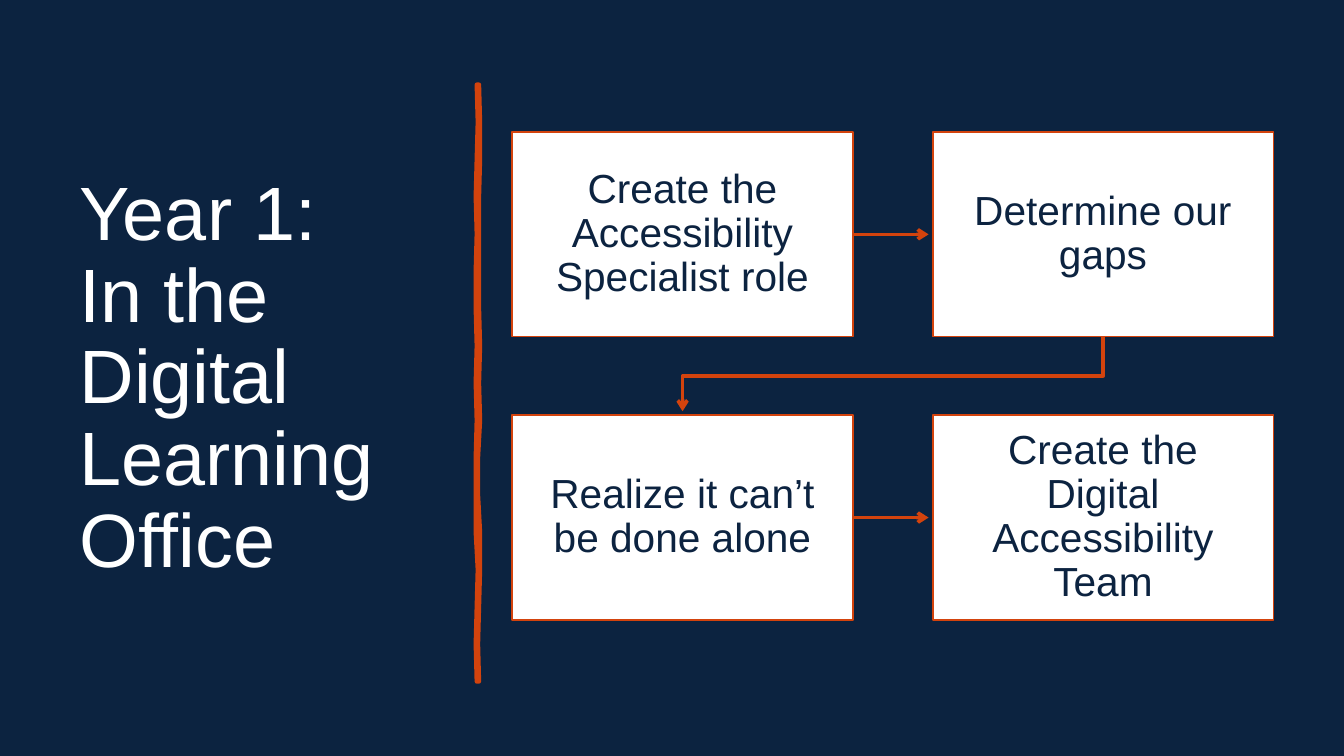
from dataclasses import dataclass

from lxml import etree
from pptx import Presentation
from pptx.dml.color import RGBColor
from pptx.enum.shapes import MSO_CONNECTOR, MSO_SHAPE
from pptx.enum.text import MSO_ANCHOR, PP_ALIGN
from pptx.oxml.ns import qn
from pptx.util import Inches, Pt

RECTANGLE = MSO_SHAPE.RECTANGLE
STRAIGHT = MSO_CONNECTOR.STRAIGHT
MIDDLE = MSO_ANCHOR.MIDDLE
LEFT, CENTER = PP_ALIGN.LEFT, PP_ALIGN.CENTER

TITLE = "Year 1:\vIn the Digital Learning Office"
STEPS = [
    "Create the Accessibility Specialist role",
    "Determine our gaps",
    "Realize it can’t be done alone",
    "Create the Digital Accessibility Team",
]
DIVIDER_RIGHT = [4.75, 4.76, 4.76, 4.75, 4.75, 4.75, 4.75, 4.76, 4.75,
                 4.76, 4.74, 4.74, 4.76, 4.76, 4.75, 4.74, 4.75]
DIVIDER_LEFT = [4.73, 4.74, 4.73, 4.72, 4.73, 4.72, 4.72, 4.73, 4.72,
                4.73, 4.72, 4.72, 4.72, 4.74, 4.73, 4.72, 4.73]


@dataclass(frozen=True)
class Theme:
    navy: RGBColor = RGBColor(0x0C, 0x23, 0x40)
    orange: RGBColor = RGBColor(0xD3, 0x43, 0x0D)
    white: RGBColor = RGBColor(0xFF, 0xFF, 0xFF)
    font: str = "Arial"
    title_size: int = 54
    step_size: int = 29
    box_line: float = 1.25
    arrow_line: float = 2.5
    divider_line: float = 3.25


THEME = Theme()
SLIDE_WIDTH, SLIDE_HEIGHT = 13.33, 7.5
TITLE_BOX = (0.69, 0.71, 3.74, 6.11)
GRID_LEFT, GRID_TOP, COLUMNS = 5.08, 1.31, 2
BOX_WIDTH, BOX_HEIGHT = 3.38, 2.03
COLUMN_PITCH, ROW_PITCH = 4.17, 2.81
BOX_INSET, ARROW_GAP = 0.17, 0.04
DIVIDER_TOP, DIVIDER_BOTTOM = 0.84, 6.76


def set_text(shape, text, size, color, alignment, inset):
    frame = shape.text_frame
    frame.word_wrap = True
    frame.vertical_anchor = MIDDLE
    frame.margin_left = frame.margin_right = Inches(inset)
    frame.margin_top = frame.margin_bottom = Inches(min(inset, BOX_INSET))
    frame.text = text
    paragraph = frame.paragraphs[0]
    paragraph.alignment = alignment
    paragraph.line_spacing = 0.9
    for run in paragraph.runs:
        run.font.name = THEME.font
        run.font.size = Pt(size)
        run.font.color.rgb = color


def set_line(shape, width):
    shape.line.color.rgb = THEME.orange
    shape.line.width = Pt(width)


def add_arrowhead(shape):
    line = shape.element.spPr.find(qn("a:ln"))
    etree.SubElement(line, qn("a:tailEnd"), type="arrow")


def add_outline(slide, points, width, close):
    corners = [(Inches(x), Inches(y)) for x, y in points]
    builder = slide.shapes.build_freeform(*corners[0])
    builder.add_line_segments(corners[1:], close=close)
    shape = builder.convert_to_shape()
    shape.shadow.inherit = False
    set_line(shape, width)
    return shape


def add_divider(slide):
    step = (DIVIDER_BOTTOM - DIVIDER_TOP) / (len(DIVIDER_RIGHT) - 1)
    heights = [DIVIDER_TOP + step * index for index in range(len(DIVIDER_RIGHT))]
    right = list(zip(DIVIDER_RIGHT, heights))
    left = list(zip(DIVIDER_LEFT, heights))
    divider = add_outline(slide, right + left[::-1], THEME.divider_line, True)
    divider.fill.solid()
    divider.fill.fore_color.rgb = THEME.orange


def add_step(slide, text, left, top):
    box = slide.shapes.add_shape(
        RECTANGLE, *map(Inches, (left, top, BOX_WIDTH, BOX_HEIGHT)))
    box.shadow.inherit = False
    box.fill.solid()
    box.fill.fore_color.rgb = THEME.white
    set_line(box, THEME.box_line)
    set_text(box, text, THEME.step_size, THEME.navy, CENTER, BOX_INSET)


def add_row_arrow(slide, left, top):
    middle = top + BOX_HEIGHT / 2
    ends = (left + BOX_WIDTH, middle, left + COLUMN_PITCH - ARROW_GAP, middle)
    arrow = slide.shapes.add_connector(STRAIGHT, *map(Inches, ends))
    etree.SubElement(arrow.element.spPr, qn("a:effectLst"))
    set_line(arrow, THEME.arrow_line)
    add_arrowhead(arrow)


def add_return_arrow(slide, left, top):
    target_x = GRID_LEFT + BOX_WIDTH / 2
    source_x = left + BOX_WIDTH / 2
    source_y = top + BOX_HEIGHT
    target_y = top + ROW_PITCH
    turn_y = (source_y + target_y) / 2
    points = [(source_x, source_y), (source_x, turn_y),
              (target_x, turn_y), (target_x, target_y - ARROW_GAP)]
    arrow = add_outline(slide, points, THEME.arrow_line, False)
    arrow.fill.background()
    add_arrowhead(arrow)


def main():
    presentation = Presentation()
    presentation.slide_width = Inches(SLIDE_WIDTH)
    presentation.slide_height = Inches(SLIDE_HEIGHT)
    slide = presentation.slides.add_slide(presentation.slide_layouts[6])
    slide.background.fill.solid()
    slide.background.fill.fore_color.rgb = THEME.navy

    title = slide.shapes.add_textbox(*map(Inches, TITLE_BOX))
    set_text(title, TITLE, THEME.title_size, THEME.white, LEFT, 0.1)
    add_divider(slide)

    for index, text in enumerate(STEPS):
        row, column = divmod(index, COLUMNS)
        left = GRID_LEFT + column * COLUMN_PITCH
        top = GRID_TOP + row * ROW_PITCH
        add_step(slide, text, left, top)
        if column < COLUMNS - 1:
            add_row_arrow(slide, left, top)
        elif index < len(STEPS) - 1:
            add_return_arrow(slide, left, top)

    presentation.save("out.pptx")


if __name__ == "__main__":
    main()
